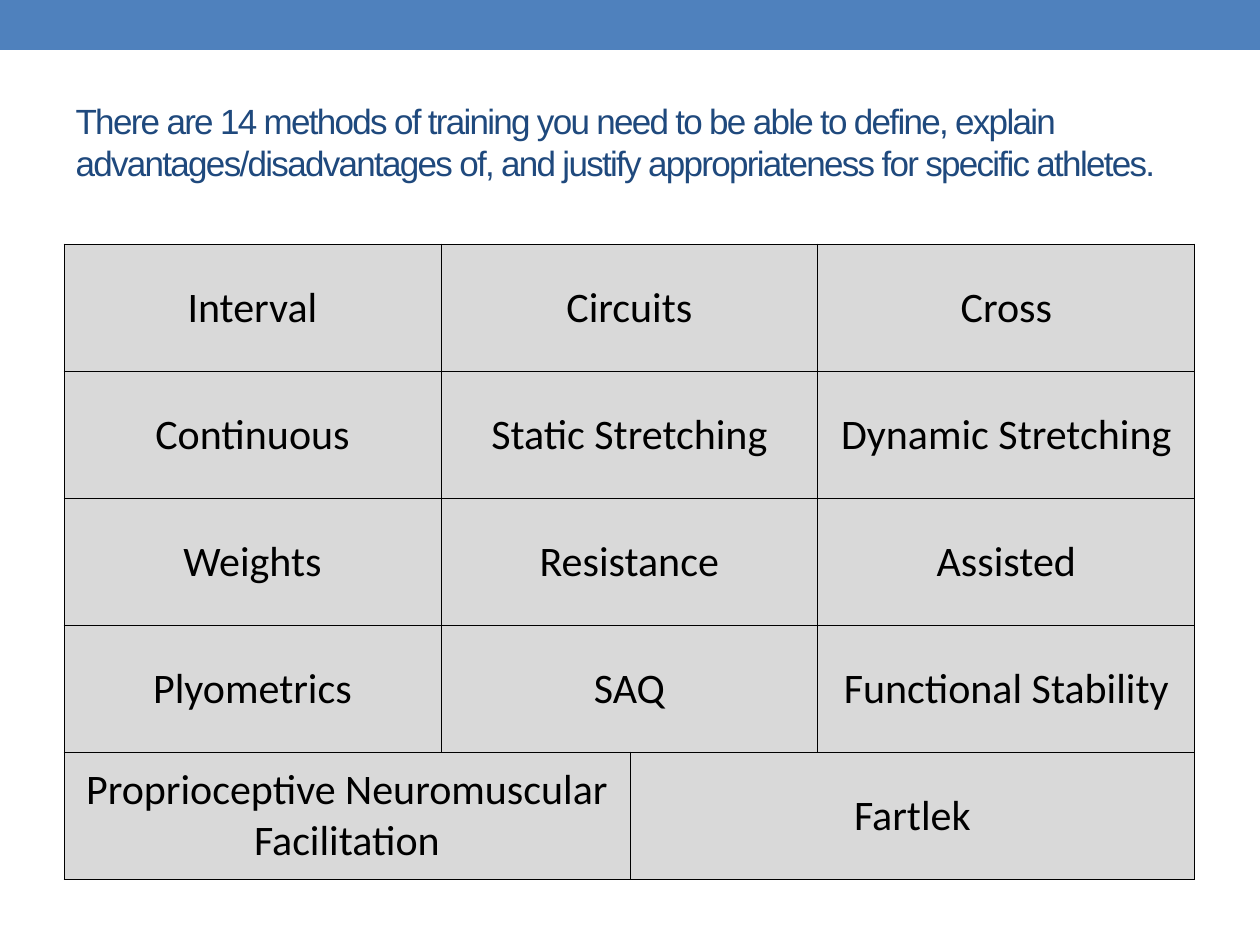
"""Build a slide listing fourteen training methods in a table."""
from lxml import etree
from pptx import Presentation
from pptx.dml.color import RGBColor
from pptx.enum.shapes import MSO_SHAPE
from pptx.enum.text import MSO_ANCHOR, MSO_AUTO_SIZE, PP_ALIGN
from pptx.oxml.ns import qn
from pptx.util import Pt

PX = 914400 // 126
RECTANGLE = MSO_SHAPE.RECTANGLE
MIDDLE = MSO_ANCHOR.MIDDLE
CENTER = PP_ALIGN.CENTER
LEFT = PP_ALIGN.LEFT
NO_FIT = MSO_AUTO_SIZE.NONE
COLUMN_WIDTHS = [377, 189, 188, 377]
ROW_HEIGHT = 127
METHODS = [
    ["Interval", "Circuits", "Cross"],
    ["Continuous", "Static Stretching", "Dynamic Stretching"],
    ["Weights", "Resistance", "Assisted"],
    ["Plyometrics", "SAQ", "Functional Stability"],
    ["Proprioceptive Neuromuscular Facilitation", "Fartlek"],
]
COLUMN_SPANS = {3: [(0, 0), (1, 2), (3, 3)], 2: [(0, 1), (2, 3)]}


def color(value):
    return RGBColor.from_string(value)


def add_span(para, text, font, size, value):
    span = para.add_run()
    span.text = text
    span.font.name = font
    span.font.size = Pt(size)
    span.font.color.rgb = color(value)
    return span


deck = Presentation()
deck.slide_width = 1260 * PX
deck.slide_height = 945 * PX
page = deck.slides.add_slide(deck.slide_layouts[5])

banner = page.shapes.add_shape(RECTANGLE, 0, 0, 1260 * PX, 50 * PX)
banner.shadow.inherit = False
banner.fill.solid()
banner.fill.fore_color.rgb = color("4F81BD")
banner.line.fill.background()

title = page.shapes.title
title.left, title.top, title.width, title.height = 63 * PX, 73 * PX, 1134 * PX, 136 * PX
title_frame = title.text_frame
title_frame.word_wrap = True
title_frame.auto_size = NO_FIT
title_frame.vertical_anchor = MIDDLE
title_para = title_frame.paragraphs[0]
title_para.alignment = LEFT
title_span = add_span(
    title_para,
    "There are 14 methods of training you need to be able to define, explain "
    "advantages/disadvantages of, and justify appropriateness for specific athletes.",
    "Arial", 20, "1F497D",
)
title_span.font._element.set("spc", "-100")

table = page.shapes.add_table(
    len(METHODS), len(COLUMN_WIDTHS), 64 * PX, 244 * PX,
    sum(COLUMN_WIDTHS) * PX, len(METHODS) * ROW_HEIGHT * PX,
).table
table.first_row = False
table.horz_banding = False
for column, width in zip(table.columns, COLUMN_WIDTHS):
    column.width = width * PX

for row, methods in enumerate(METHODS):
    table.rows[row].height = ROW_HEIGHT * PX
    for method, (first, last) in zip(methods, COLUMN_SPANS[len(methods)]):
        cell = table.cell(row, first)
        if last > first:
            cell.merge(table.cell(row, last))
        para = cell.text_frame.paragraphs[0]
        para.alignment = CENTER
        add_span(para, method, "Calibri", 24, "000000")
    for cell in table.rows[row].cells:
        cell.vertical_anchor = MIDDLE
        cell.margin_left = cell.margin_right = cell.margin_top = PX
        cell.margin_bottom = 0
        properties = cell._tc.get_or_add_tcPr()
        for side in ("a:lnL", "a:lnR", "a:lnT", "a:lnB"):
            border = etree.SubElement(properties, qn(side), w=str(Pt(0.5)))
            paint = etree.SubElement(border, qn("a:solidFill"))
            etree.SubElement(paint, qn("a:srgbClr"), val="000000")
        cell.fill.solid()
        cell.fill.fore_color.rgb = color("D9D9D9")

deck.save("out.pptx")
